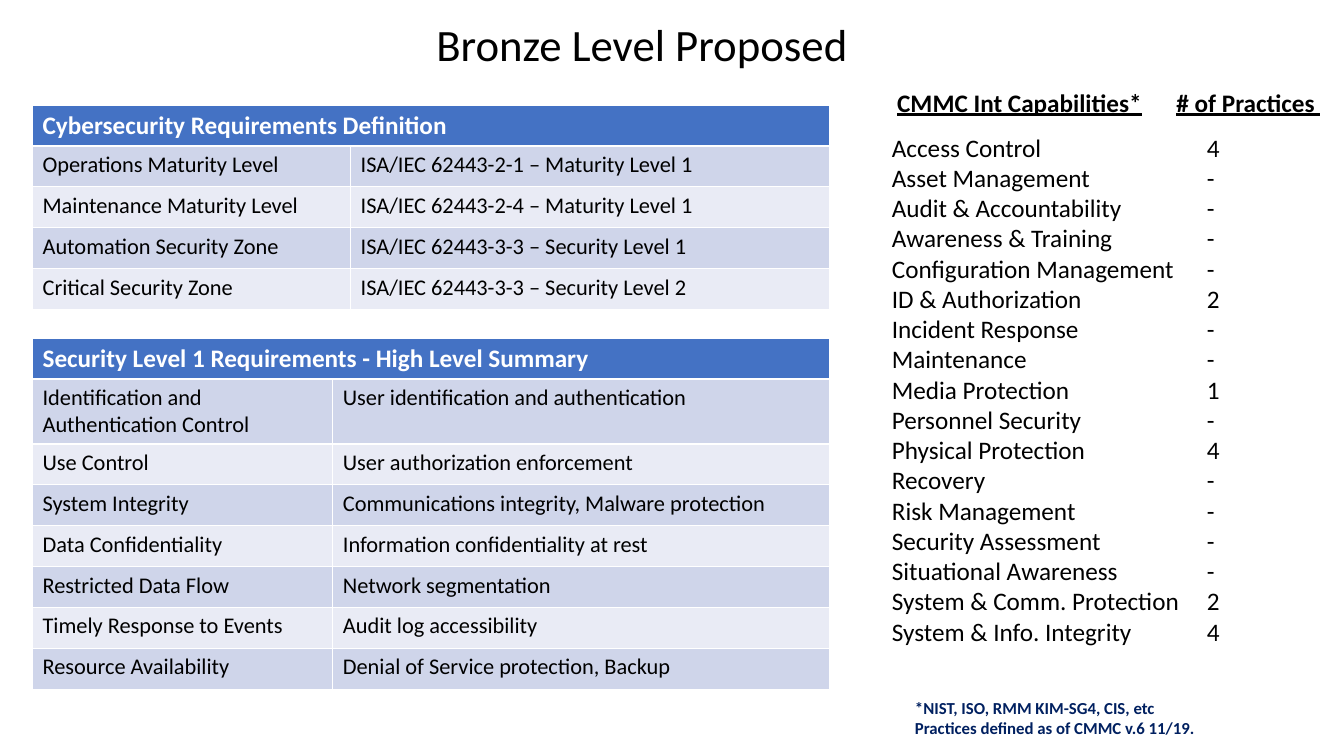
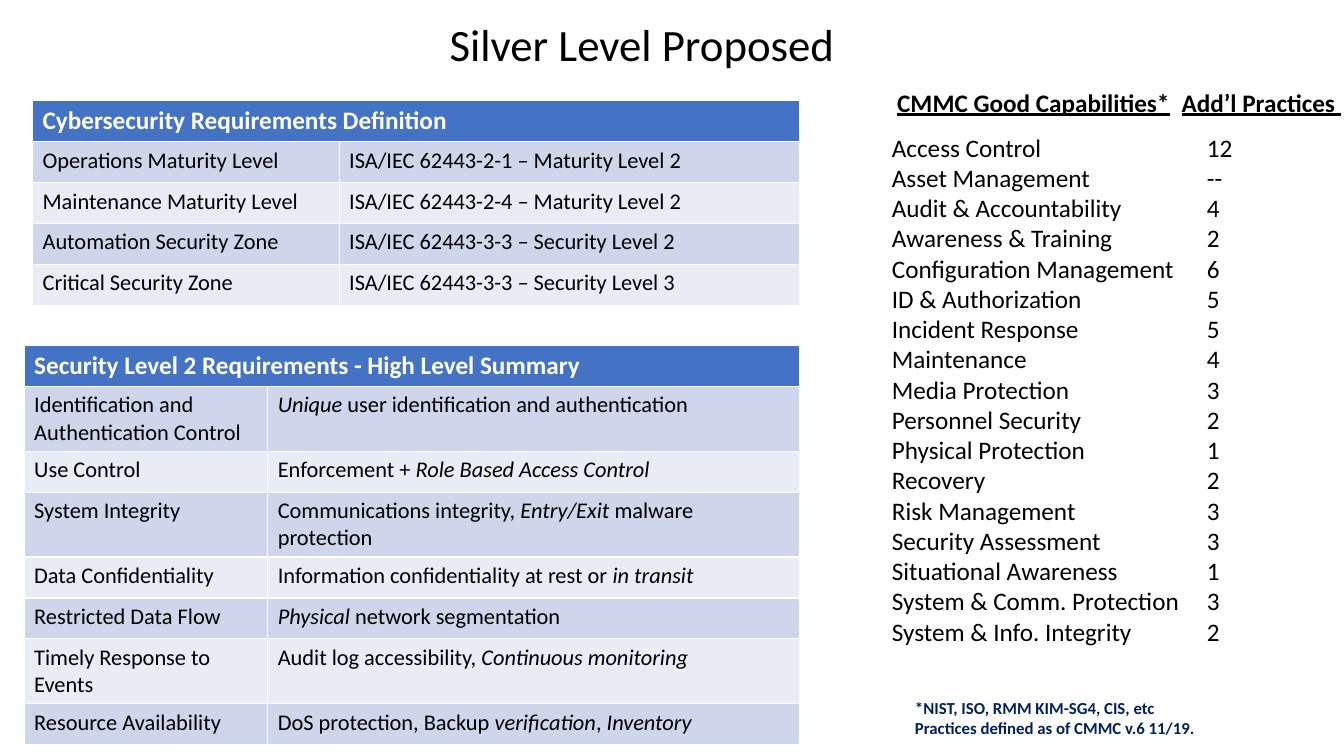
from pptx import Presentation
from pptx import util as u
from pptx.dml.color import RGBColor
from pptx.enum import text as t
from pptx.oxml import parse_xml
from pptx.oxml.ns import nsdecls

FONT = "Calibri"
HUES = {
    "ink": "000000",
    "paper": "FFFFFF",
    "head": "4472C4",
    "odd": "CFD5EA",
    "even": "E9EBF5",
    "note": "002060",
}
ROW = 39
SKILLS = [
    "Access Control", "Asset Management", "Audit & Accountability",
    "Awareness & Training", "Configuration Management", "ID & Authorization",
    "Incident Response", "Maintenance", "Media Protection",
    "Personnel Security", "Physical Protection", "Recovery",
    "Risk Management", "Security Assessment", "Situational Awareness",
    "System & Comm. Protection", "System & Info. Integrity",
]
ZONES = [
    ("Operations Maturity Level", "2-1 – Maturity", 0),
    ("Maintenance Maturity Level", "2-4 – Maturity", 0),
    ("Automation Security Zone", "3-3 – Security", 0),
    ("Critical Security Zone", "3-3 – Security", 1),
]
NEEDS = [
    "Identification and Authentication Control", "Use Control",
    "System Integrity", "Data Confidentiality", "Restricted Data Flow",
    "Timely Response to Events", "Resource Availability",
]
NOTES = [
    "*NIST, ISO, RMM KIM-SG4, CIS, etc",
    "Practices defined as of CMMC v.6 11/19.",
]
LEVELS = [
    {
        "name": "Bronze",
        "level": 1,
        "zones": (31, 100, [303, 456]),
        "needs": (31, 322, [286, 473]),
        "heads": ("CMMC Int Capabilities*", "# of Practices "),
        "tab": 266,
        "counts": "4 - - - - 2 - - 1 - 4 - - - - 2 4",
        "means": [
            "User identification and authentication",
            "User authorization enforcement",
            "Communications integrity, Malware protection",
            "Information confidentiality at rest",
            "Network segmentation",
            "Audit log accessibility",
            "Denial of Service protection, Backup",
        ],
    },
    {
        "name": "Silver",
        "level": 2,
        "zones": (31, 96, [292, 439]),
        "needs": (23, 329, [232, 507]),
        "heads": ("CMMC Good Capabilities*", "Add’l Practices "),
        "tab": 271,
        "counts": "12 -- 4 2 6 5 5 4 3 2 1 2 3 3 1 3 2",
        "means": [
            "_Unique_ user identification and authentication",
            "Enforcement + _Role Based Access Control_",
            "Communications integrity, _Entry/Exit _malware protection",
            "Information confidentiality at rest or _in transit_",
            "_Physical_ network segmentation",
            "Audit log accessibility, _Continuous monitoring_",
            "DoS protection, Backup _verification_, _Inventory_",
        ],
    },
]


def px(n):
    return u.Emu(n * 9525)


def hue(name):
    return RGBColor.from_string(HUES[name])


def add_run(para, words, size, color="ink", bold=False, slant=False, line=False):
    run = para.add_run()
    run.text = words
    font = run.font
    font.name = FONT
    font.size = u.Pt(size)
    font.bold = bold
    font.italic = slant
    font.underline = line
    font.color.rgb = hue(color)


def add_title(slide, words):
    title = slide.shapes.title
    title.left, title.top, title.width, title.height = map(px, (167, 11, 889, 61))
    frame = title.text_frame
    frame.auto_size = t.MSO_AUTO_SIZE.NONE
    para = frame.paragraphs[0]
    para.alignment = t.PP_ALIGN.CENTER
    add_run(para, words, 32)


def add_box(slide, area):
    frame = slide.shapes.add_textbox(*map(px, area)).text_frame
    frame.word_wrap = True
    return frame


def add_list(slide, area, lines, size, **look):
    frame = add_box(slide, area)
    for i, words in enumerate(lines):
        para = frame.add_paragraph() if i else frame.paragraphs[0]
        add_run(para, words, size, **look)


def add_heads(slide, heads, tab):
    frame = add_box(slide, (845, 78, 435, 38))
    frame.margin_right = 0
    para = frame.paragraphs[0]
    props = para._p.get_or_add_pPr()
    props.append(parse_xml(
        f'<a:tabLst {nsdecls("a")}><a:tab pos="{px(tab)}" algn="l"/></a:tabLst>'))
    add_run(para, "\t".join(heads), 18, bold=True, line=True)


def fill_cell(cell, words, size, back, **look):
    cell.fill.solid()
    cell.fill.fore_color.rgb = hue(back)
    para = cell.text_frame.paragraphs[0]
    for i, part in enumerate(words.split("_")):
        if part:
            add_run(para, part, size, slant=i % 2 == 1, **look)


def add_grid(slide, place, head, rows):
    left, top, cols = place
    count = len(rows) + 1
    area = map(px, (left, top, sum(cols), ROW * count))
    grid = slide.shapes.add_table(count, len(cols), *area).table
    for col, wide in zip(grid.columns, cols):
        col.width = px(wide)
    grid.cell(0, 0).merge(grid.cell(0, len(cols) - 1))
    fill_cell(grid.cell(0, 0), head, 18, "head", color="paper", bold=True)
    for r, row in enumerate(rows, 1):
        for c, words in enumerate(row):
            fill_cell(grid.cell(r, c), words, 16, "odd" if r % 2 else "even")


def add_level(deck, data):
    slide = deck.slides.add_slide(deck.slide_layouts[5])
    level = data["level"]
    add_title(slide, f"{data['name']} Level Proposed")
    zones = [(zone, f"ISA/IEC 62443-{part} Level {level + step}")
             for zone, part, step in ZONES]
    add_grid(slide, data["zones"], "Cybersecurity Requirements Definition", zones)
    add_grid(slide, data["needs"],
             f"Security Level {level} Requirements - High Level Summary",
             list(zip(NEEDS, data["means"])))
    add_heads(slide, data["heads"], data["tab"])
    add_list(slide, (840, 121, 300, 504), SKILLS, 18)
    add_list(slide, (1140, 121, 60, 504), data["counts"].split(), 18)
    add_list(slide, (862, 660, 310, 48), NOTES, 12, color="note", bold=True)


def main():
    deck = Presentation()
    deck.slide_width, deck.slide_height = px(1280), px(720)
    for data in LEVELS:
        add_level(deck, data)
    deck.save("out.pptx")


if __name__ == "__main__":
    main()
